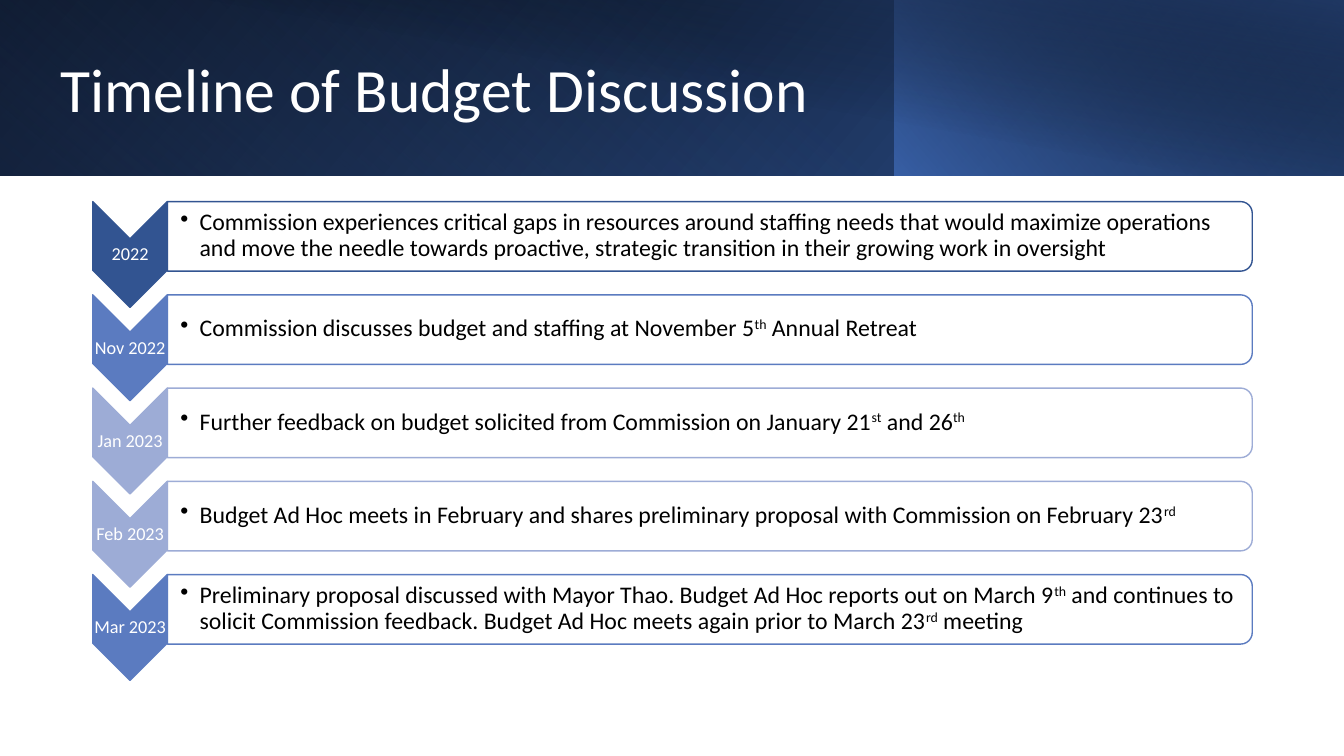
from lxml.etree import SubElement
from pptx import Presentation
from pptx.dml.color import RGBColor
from pptx.enum.shapes import MSO_SHAPE
from pptx.enum.text import MSO_ANCHOR, PP_ALIGN
from pptx.oxml.ns import qn
from pptx.util import Inches, Pt

TITLE = "Timeline of Budget Discussion"
FONT = "Calibri"
NAVY, BLUE, PALE = "325491", "5B7BC0", "9DACD6"

# ^ marks where superscript starts and ends
STEPS = [
    ("2022", NAVY, "Commission experiences critical gaps in resources around staffing needs that would "
     "maximize operations and move the needle towards proactive, strategic transition in their "
     "growing work in oversight"),
    ("Nov 2022", BLUE, "Commission discusses budget and staffing at November 5^th^ Annual Retreat"),
    ("Jan 2023", PALE, "Further feedback on budget solicited from Commission on January 21^st^ and 26^th"),
    ("Feb 2023", PALE, "Budget Ad Hoc meets in February and shares preliminary proposal with Commission "
     "on February 23^rd"),
    ("Mar 2023", BLUE, "Preliminary proposal discussed with Mayor Thao. Budget Ad Hoc reports out on "
     "March 9^th^ and continues to solicit Commission feedback. Budget Ad Hoc meets again prior to "
     "March 23^rd^ meeting"),
]

WIDTH, HEIGHT = 13.33, 7.5
BAND = 1.74
SPLIT = 8.87
BAND_LAYERS = [
    (0, WIDTH, 0, True, 140, [(0, "000000", 100), (100, "2F5597", 100)]),
    (0, SPLIT, 180, True, 230, [(20, "4472C4", 0), (100, "203864", 55)]),
    (SPLIT, WIDTH - SPLIT, 0, True, 220, [(0, "4472C4", 66), (100, "000000", 30)]),
    (0.5, WIDTH - 0.5, 0, False, 280, [(50, "000000", 0), (99, "203864", 52)]),
]

FIRST_ROW, ROW_PITCH = 2.0, 0.925
DATE_LEFT, DATE_WIDTH, DATE_HEIGHT = 0.92, 0.74, 1.05
NOTE_LEFT, NOTE_WIDTH, NOTE_HEIGHT = DATE_LEFT + DATE_WIDTH, 10.76, 0.69


def rgb(value):
    return RGBColor.from_string(value)


def set_opacity(color_element, percent):
    SubElement(color_element, qn("a:alpha")).set("val", str(percent * 1000))


def add_band_layer(left, width, turn, flipped, angle, stops):
    layer = slide.shapes.add_shape(MSO_SHAPE.RECTANGLE, Inches(left), 0, Inches(width), Inches(BAND))
    layer.shadow.inherit = False
    layer.line.fill.background()
    layer.rotation = turn
    if flipped:
        layer._element.spPr.find(qn("a:xfrm")).set("flipH", "1")
    layer.fill.gradient()
    layer.fill.gradient_angle = 360 - angle
    for stop, (position, color, _) in zip(layer.fill.gradient_stops, stops):
        stop.position = position / 100
        stop.color.rgb = rgb(color)
    colors = list(layer._element.spPr.find(qn("a:gradFill")).iter(qn("a:srgbClr")))
    for color_element, (_, _, opacity) in zip(colors, stops):
        if opacity < 100:
            set_opacity(color_element, opacity)


def add_upright(kind, left, top, width, height, fill, line):
    center_x, center_y = left + width / 2, top + height / 2
    upright = slide.shapes.add_shape(kind, Inches(center_x - height / 2), Inches(center_y - width / 2),
                                     Inches(height), Inches(width))
    upright.rotation = 90
    upright.shadow.inherit = False
    upright.fill.solid()
    upright.fill.fore_color.rgb = rgb(fill)
    upright.line.color.rgb = rgb(line)
    upright.line.width = Pt(1)
    return upright


def add_words(paragraph, words, size, color):
    for index, part in enumerate(words.split("^")):
        run = paragraph.add_run()
        run.text = part
        run.font.name, run.font.size = FONT, Pt(size)
        run.font.color.rgb = rgb(color)
        if index % 2:
            run._r.get_or_add_rPr().set("baseline", "30000")


def add_label(left, top, width, height, words, size, color, inset=0.01):
    frame = slide.shapes.add_textbox(Inches(left), Inches(top), Inches(width), Inches(height)).text_frame
    frame.word_wrap = True
    frame.vertical_anchor = MSO_ANCHOR.MIDDLE
    frame.margin_left = Inches(inset)
    frame.margin_right = frame.margin_top = frame.margin_bottom = Inches(0.01)
    paragraph = frame.paragraphs[0]
    paragraph.line_spacing = 0.9
    add_words(paragraph, words, size, color)
    return paragraph


def add_step(top, date, color, note):
    add_upright(MSO_SHAPE.CHEVRON, DATE_LEFT, top, DATE_WIDTH, DATE_HEIGHT, color, color)
    date_text = add_label(DATE_LEFT, top + DATE_WIDTH / 2, DATE_WIDTH, 0.32, date, 13, "FFFFFF")
    date_text.alignment = PP_ALIGN.CENTER

    note_box = add_upright(MSO_SHAPE.ROUND_2_SAME_RECTANGLE, NOTE_LEFT, top, NOTE_WIDTH, NOTE_HEIGHT,
                           "FFFFFF", color)
    set_opacity(note_box._element.spPr.find(qn("a:solidFill"))[0], 90)
    note_text = add_label(NOTE_LEFT, top + 0.03, NOTE_WIDTH - 0.03, 0.62, note, 17, "000000", 0.13)
    properties = note_text._p.get_or_add_pPr()
    properties.set("marL", str(Inches(0.19)))
    properties.set("indent", str(-Inches(0.19)))
    SubElement(properties, qn("a:buChar")).set("char", "•")


deck = Presentation()
deck.slide_width, deck.slide_height = Inches(WIDTH), Inches(HEIGHT)
slide = deck.slides.add_slide(deck.slide_layouts[5])

for band_layer in BAND_LAYERS:
    add_band_layer(*band_layer)

title = slide.shapes.title
slide.shapes._spTree.append(title._element)
title.left, title.top, title.width, title.height = map(Inches, (0.5, 0.35, 10.82, 1.13))
title.text_frame.vertical_anchor = MSO_ANCHOR.MIDDLE
heading = title.text_frame.paragraphs[0]
heading.alignment = PP_ALIGN.LEFT
heading.line_spacing = 0.9
add_words(heading, TITLE, 44, "FFFFFF")

for row, step in enumerate(STEPS):
    add_step(FIRST_ROW + row * ROW_PITCH, *step)

deck.save("out.pptx")
